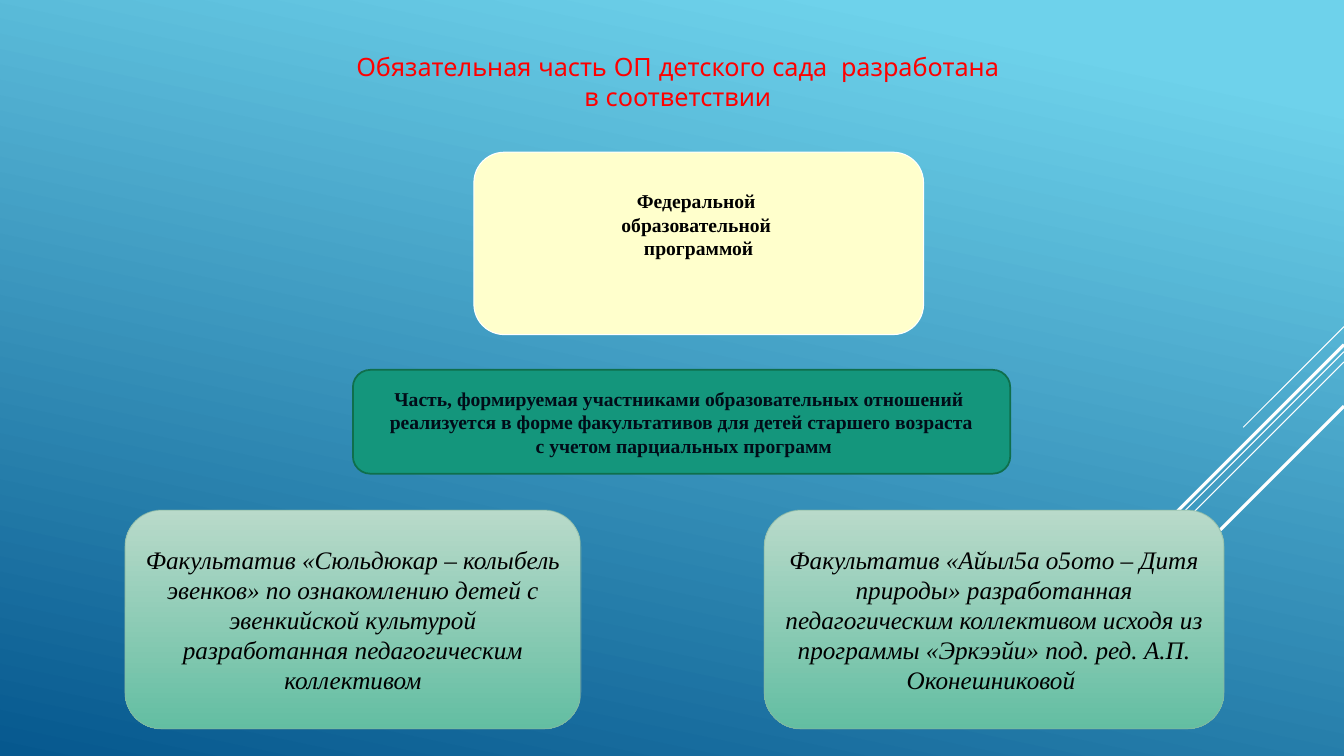
from lxml import etree
from pptx import Presentation
from pptx import util as u
from pptx.dml.color import RGBColor
from pptx.enum import shapes, text
from pptx.oxml import ns


def paint(fill, *tones, angle=0, start=0):
    """Fill with one hex tone, or blend two; the angle runs counter-clockwise."""
    if len(tones) == 1:
        fill.solid()
        fill.fore_color.rgb = RGBColor.from_string(tones[0])
        return
    fill.gradient()
    fill.gradient_angle = angle
    for stop, tone, place in zip(fill.gradient_stops, tones, (start, 1)):
        stop.color.rgb = RGBColor.from_string(tone)
        stop.position = place


deck = Presentation()
deck.slide_width, deck.slide_height = u.Inches(13.33), u.Inches(7.5)
wide, high = deck.slide_width, deck.slide_height
slide = deck.slides.add_slide(deck.slide_layouts[6])
paint(slide.background.fill, "6ED2EB", "06588E", angle=258, start=0.1)

# Diagonal rays from the right edge: start and drop in % of height, weight
rays = [
    (43.2, 13.33, 0.75),
    (46.53, 43.47, 0.75),
    (47.87, 27.6, 0.75),
    (45.6, 25.47, 2.25),
    (53.73, 18.53, 2.25),
]
for top, drop, weight in rays:
    y, run = int(high * top / 100), int(high * drop / 100)
    ray = slide.shapes.add_connector(
        shapes.MSO_CONNECTOR.STRAIGHT, wide, y, wide - run, y + run)
    paint(ray.line.fill, "FFFFFF")
    ray.line.width = u.Pt(weight)
    etree.SubElement(ray.element.spPr, ns.qn("a:effectLst"))

serif = "Times New Roman"
title = dict(size=u.Pt(18), name="Quicksand")
strong = dict(size=u.Pt(14), name=serif, bold=True)
slant = dict(size=u.Pt(18), name=serif, italic=True)
mint = ["B9DACA", "63BEA2"]
mid, top = text.MSO_ANCHOR.MIDDLE, text.MSO_ANCHOR.TOP

# Place in % of the slide, fill, line, line weight, ink, font, frame, lines
boxes = [
    ((25.43, 6.13, 50, 9.47), None, None, 0, "FF0000", title,
     dict(vertical_anchor=top, word_wrap=True),
     ["Обязательная часть ОП детского сада  разработана в соответствии"]),
    ((35.26, 20.13, 33.46, 24.13), ["FFFFCC"], "FFFFFF", 0.75, "000000", strong,
     dict(vertical_anchor=top, word_wrap=False, margin_top=u.Inches(0.28)),
     ["Федеральной ", "образовательной ", "программой"]),
    ((26.26, 48.93, 48.91, 13.73), ["14967C"], "0F6F4C", 1.25, "010C18", strong,
     dict(vertical_anchor=mid, word_wrap=True),
     ["Часть, формируемая участниками образовательных отношений ",
      "реализуется в форме факультативов для детей старшего возраста",
      " с учетом парциальных программ"]),
    ((9.3, 67.47, 33.91, 28.93), mint, "8AB7A1", 0.75, "000000", slant,
     dict(vertical_anchor=mid, word_wrap=True),
     ["Факультатив «Сюльдюкар – колыбель эвенков» по ознакомлению детей с "
      "эвенкийской культурой разработанная педагогическим коллективом"]),
    ((56.86, 67.47, 34.21, 28.93), mint, "8AB7A1", 0.75, "000000", slant,
     dict(vertical_anchor=mid, word_wrap=True),
     ["Факультатив «Айыл5а о5ото – Дитя природы» разработанная "
      "педагогическим коллективом исходя из программы «Эркээйи» под. ред. "
      "А.П. Оконешниковой "]),
]
for place, fill, edge, weight, ink, font, frame, lines in boxes:
    spot = [int(side * part / 100)
            for side, part in zip((wide, high, wide, high), place)]
    if fill:
        box = slide.shapes.add_shape(shapes.MSO_SHAPE.ROUNDED_RECTANGLE, *spot)
        box.shadow.inherit = False
        paint(box.fill, *fill, angle=270)
        paint(box.line.fill, edge)
        box.line.width = u.Pt(weight)
    else:
        box = slide.shapes.add_textbox(*spot)
    if fill == mint:
        for tone in box.element.spPr.find(ns.qn("a:ln")).iter(ns.qn("a:srgbClr")):
            tone.append(tone.makeelement(ns.qn("a:alpha"), {"val": "60000"}))
    for key, value in frame.items():
        setattr(box.text_frame, key, value)
    box.text_frame.text = "\n".join(lines)
    for para in box.text_frame.paragraphs:
        para.alignment = text.PP_ALIGN.CENTER
        run = para.runs[0]
        paint(run.font.fill, ink)
        for key, value in font.items():
            setattr(run.font, key, value)

deck.save("out.pptx")
